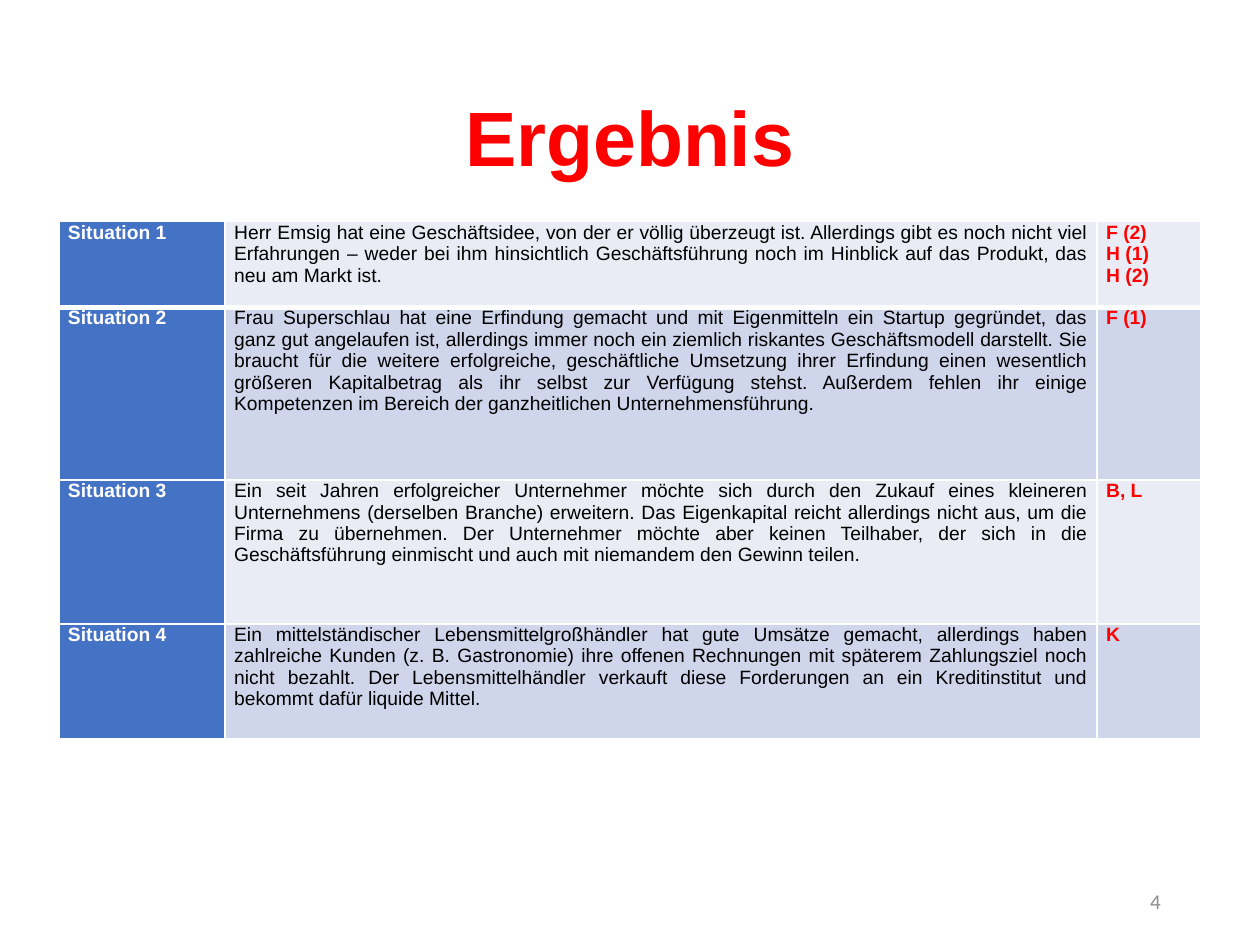
from lxml.etree import SubElement
from pptx import Presentation
from pptx.dml.color import RGBColor
from pptx.enum.text import MSO_ANCHOR as Anchor, PP_ALIGN as Align
from pptx.oxml.ns import qn
from pptx.util import Cm, Pt

WHITE, RED, BLACK, GREY, BLUE = "FFFFFF", "FF0000", "000000", "8C8C8C", "4472C4"
BANDS = ("E9EBF5", "CFD5EA")

COLUMNS = (3.35, 17.58, 2.08)
ROW_HEIGHTS = (1.73, 3.48, 2.9, 2.31)
SITUATIONS = [
    ("Herr Emsig hat eine Geschäftsidee, von der er völlig überzeugt ist. "
     "Allerdings gibt es noch nicht viel Erfahrungen – weder bei ihm "
     "hinsichtlich Geschäftsführung noch im Hinblick auf das Produkt, das neu "
     "am Markt ist.", ["F (2)", "H (1)", "H (2)"]),
    ("Frau Superschlau hat eine Erfindung gemacht und mit Eigenmitteln ein "
     "Startup gegründet, das ganz gut angelaufen ist, allerdings immer noch "
     "ein ziemlich riskantes Geschäftsmodell darstellt. Sie braucht für die "
     "weitere erfolgreiche, geschäftliche Umsetzung ihrer Erfindung einen "
     "wesentlich größeren Kapitalbetrag als ihr selbst zur Verfügung stehst. "
     "Außerdem fehlen ihr einige Kompetenzen im Bereich der ganzheitlichen "
     "Unternehmensführung.", ["F (1)"]),
    ("Ein seit Jahren erfolgreicher Unternehmer möchte sich durch den Zukauf "
     "eines kleineren Unternehmens (derselben Branche) erweitern. Das "
     "Eigenkapital reicht allerdings nicht aus, um die Firma zu übernehmen. "
     "Der Unternehmer möchte aber keinen Teilhaber, der sich in die "
     "Geschäftsführung einmischt und auch mit niemandem den Gewinn teilen.",
     ["B, L"]),
    ("Ein mittelständischer Lebensmittelgroßhändler hat gute Umsätze gemacht, "
     "allerdings haben zahlreiche Kunden (z. B. Gastronomie) ihre offenen "
     "Rechnungen mit späterem Zahlungsziel noch nicht bezahlt. Der "
     "Lebensmittelhändler verkauft diese Forderungen an ein Kreditinstitut "
     "und bekommt dafür liquide Mittel.", ["K"]),
]


def rgb(value):
    return RGBColor.from_string(value)


def set_all(target, values):
    for name, value in values.items():
        setattr(target, name, value)


class SlideBuilder:
    cell_margins = dict(margin_left=Cm(0.18), margin_right=Cm(0.18),
                        margin_top=0, margin_bottom=0)

    def __init__(self, slide):
        self.s = slide

    def add_lines(self, tf, lines, color, font, para):
        for i, line in enumerate(lines):
            p = tf.paragraphs[0] if i == 0 else tf.add_paragraph()
            set_all(p, para)
            r = p.add_run()
            r.text = line
            set_all(r.font, font)
            r.font.color.rgb = rgb(color)

    def text(self, box, line, color, font, para):
        tf = self.s.shapes.add_textbox(*map(Cm, box)).text_frame
        set_all(tf, dict(word_wrap=True, vertical_anchor=Anchor.MIDDLE))
        self.add_lines(tf, [line], color, font, para)

    def border(self, cell, side, width):
        ln = SubElement(cell._tc.get_or_add_tcPr(), qn(f"a:ln{side}"),
                        w=str(Pt(width)))
        SubElement(SubElement(ln, qn("a:solidFill")), qn("a:srgbClr"), val=WHITE)

    def cell(self, cell, lines, color, fill, bold, edges):
        set_all(cell, self.cell_margins)
        for side, width in edges.items():
            self.border(cell, side, width)
        cell.fill.solid()
        cell.fill.fore_color.rgb = rgb(fill)
        self.add_lines(cell.text_frame, lines, color,
                       dict(name="Arial", size=Pt(11), bold=bold),
                       dict(alignment=Align.JUSTIFY))

    def table(self, left, top, widths, heights, rows):
        box = (left, top, sum(widths), sum(heights))
        table = self.s.shapes.add_table(
            len(heights), len(widths), *map(Cm, box)).table
        for column, width in zip(table.columns, widths):
            column.width = Cm(width)
        for row, height in zip(table.rows, heights):
            row.height = Cm(height)
        for i, (story, answers) in enumerate(rows):
            # A thick rule separates the first row from the others
            edges = dict(L=1, R=1, T=3 if i == 1 else 1, B=3 if i == 0 else 1)
            band = BANDS[i % 2]
            contents = [([f"Situation {i + 1}"], WHITE, BLUE, True),
                        ([story], BLACK, band, False),
                        (answers, RED, band, True)]
            for j, content in enumerate(contents):
                self.cell(table.cell(i, j), *content, edges)


def main():
    prs = Presentation()
    set_all(prs, dict(slide_width=Cm(25.4), slide_height=Cm(19.05)))
    builder = SlideBuilder(prs.slides.add_slide(prs.slide_layouts[6]))

    # Title
    builder.text((1.75, 1.02, 21.9, 3.68), "Ergebnis", RED,
                 dict(name="Arial", size=Pt(44), bold=True),
                 dict(alignment=Align.CENTER, line_spacing=0.9))

    # Situations with their matching answers
    builder.table(1.19, 4.47, COLUMNS, ROW_HEIGHTS, SITUATIONS)

    # Slide number
    builder.text((17.93, 17.65, 5.72, 1.02), "4", GREY,
                 dict(name="Calibri", size=Pt(12)),
                 dict(alignment=Align.RIGHT))

    prs.save("out.pptx")


if __name__ == "__main__":
    main()
